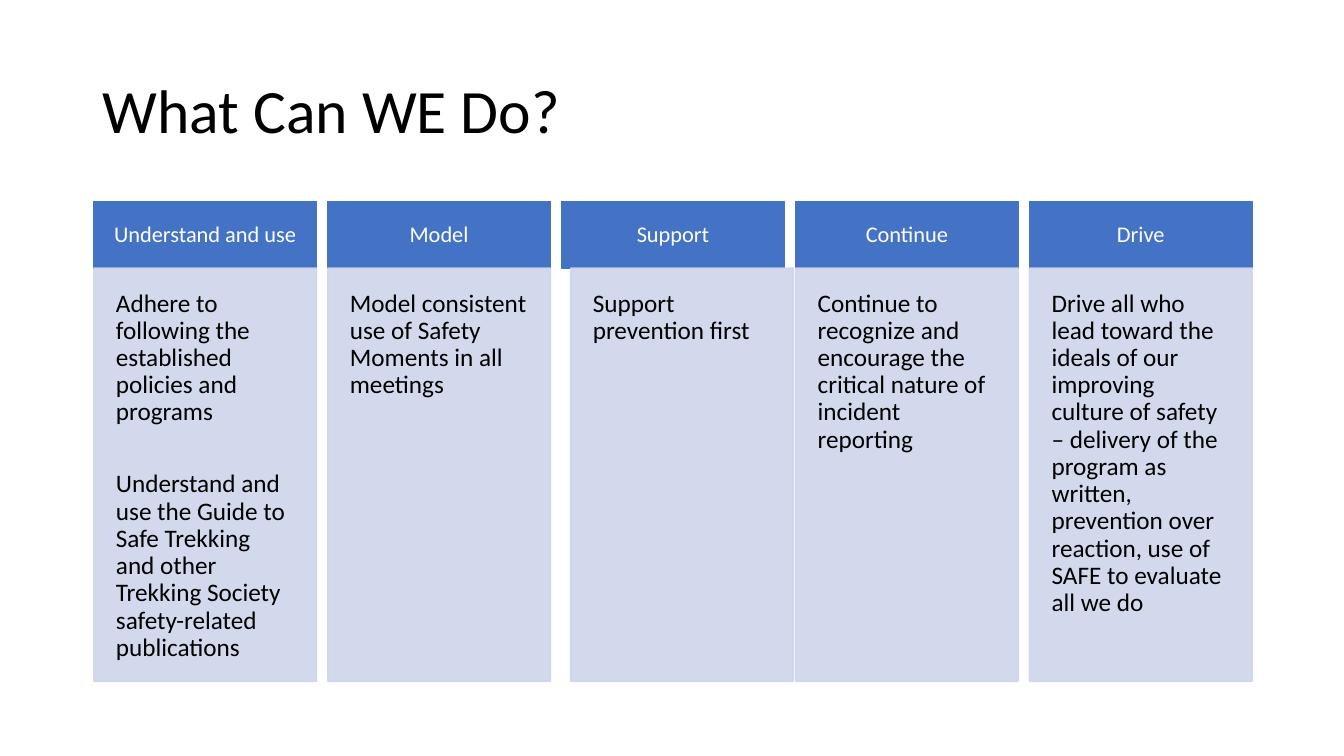
from pptx import Presentation
from pptx.dml.color import RGBColor
from pptx.enum.shapes import MSO_SHAPE
from pptx.enum.text import MSO_ANCHOR, MSO_AUTO_SIZE, PP_ALIGN
from pptx.oxml.ns import qn
from pptx.util import Pt

PX = 9144
BLUE = RGBColor(0x44, 0x72, 0xC4)
PALE = RGBColor(0xCF, 0xD5, 0xEA)
BLACK = RGBColor(0, 0, 0)
WHITE = RGBColor(0xFF, 0xFF, 0xFF)
FONT = "Calibri"
RECT = MSO_SHAPE.RECTANGLE
TOP, MIDDLE = MSO_ANCHOR.TOP, MSO_ANCHOR.MIDDLE
LEFT, CENTER = PP_ALIGN.LEFT, PP_ALIGN.CENTER
NO_FIT = MSO_AUTO_SIZE.NONE

TITLE_ONLY = 5
HEAD = 66
PITCH = 232
WIDTH = 221
GAP = Pt(32)

COLUMNS = [
    ("Understand and use", 0, [
        "Adhere to following the established policies and programs",
        "Understand and use the Guide to Safe Trekking and other "
        "Trekking Society safety-related publications"]),
    ("Model", 0, ["Model consistent use of Safety Moments in all meetings"]),
    ("Support", 9, ["Support prevention first"]),
    ("Continue", 0, [
        "Continue to recognize and encourage the critical nature of "
        "incident reporting"]),
    ("Drive", 0, [
        "Drive all who lead toward the ideals of our improving culture of "
        "safety – delivery of the program as written, prevention over "
        "reaction, use of SAFE to evaluate all we do"]),
]


def write(frame, lines, size, color, align, anchor, inset):
    """Fill a text frame with one paragraph per line."""
    frame.word_wrap = True
    frame.auto_size = NO_FIT
    frame.vertical_anchor = anchor
    frame.margin_left = frame.margin_right = inset[0] * PX
    frame.margin_top = frame.margin_bottom = inset[1] * PX
    for i, line in enumerate(lines):
        para = frame.add_paragraph() if i else frame.paragraphs[0]
        para.alignment = align
        para.line_spacing = 0.9
        para.space_before = GAP if i else Pt(0)
        run = para.add_run()
        run.text = line
        run.font.name = FONT
        run.font.size = Pt(size)
        run.font.color.rgb = color


def panel(slide, box, color, alpha=100):
    """Draw a flat rectangle with a matching outline and return it."""
    shape = slide.shapes.add_shape(RECT, *(n * PX for n in box))
    shape.shadow.inherit = False
    shape.fill.solid()
    shape.fill.fore_color.rgb = color
    shape.line.color.rgb = color
    shape.line.width = Pt(1)
    if alpha < 100:
        for tint in shape.element.spPr.iter(qn("a:srgbClr")):
            node = tint.makeelement(qn("a:alpha"), {"val": str(alpha * 1000)})
            tint.append(node)
    return shape


def heading(slide, box, text):
    """Place and format the slide title."""
    title = slide.shapes.title
    title.left, title.top, title.width, title.height = (n * PX for n in box)
    write(title.text_frame, [text], 44, BLACK, LEFT, MIDDLE, (10, 5))


def column(slide, box, name, shift, lines):
    """Draw a column header above its body panel."""
    x, y, w, h = box
    head = panel(slide, (x, y, w, HEAD), BLUE)
    write(head.text_frame, [name], 16, WHITE, CENTER, MIDDLE, (17, 17))
    body = panel(slide, (x + shift, y + HEAD, w, h - HEAD), PALE, 90)
    write(body.text_frame, lines, 18, BLACK, LEFT, TOP, (22, 22))


def columns(slide, box):
    """Set the columns side by side at an equal pitch."""
    x, y, w, h = box
    for i, (name, shift, lines) in enumerate(COLUMNS):
        column(slide, (x + i * PITCH, y, w, h), name, shift, lines)


def main():
    """Build and save the slide."""
    deck = Presentation()
    deck.slide_width = 1333 * PX
    deck.slide_height = 750 * PX
    slide = deck.slides.add_slide(deck.slide_layouts[TITLE_ONLY])
    heading(slide, (92, 40, 1150, 145), "What Can WE Do?")
    columns(slide, (93, 200, WIDTH, 476))
    deck.save("out.pptx")


if __name__ == "__main__":
    main()
